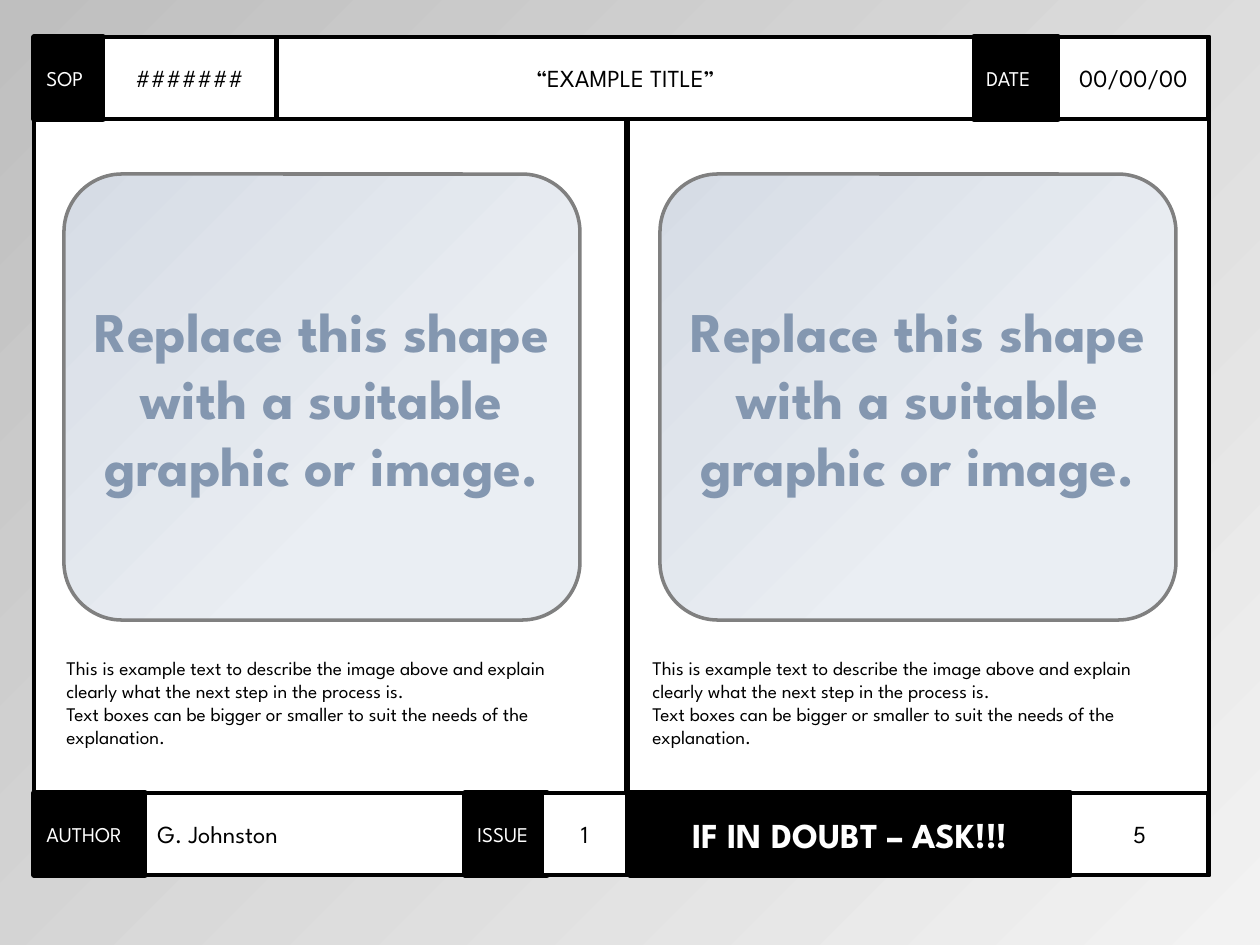
import pptx
import pptx.util
from pptx.dml.color import RGBColor
from pptx.enum.shapes import MSO_CONNECTOR, MSO_SHAPE
from pptx.enum.text import MSO_ANCHOR, PP_ALIGN
from pptx.oxml.ns import qn
from lxml import etree

PX = 914400 / 126
BLACK = RGBColor(0x00, 0x00, 0x00)
WHITE = RGBColor(0xFF, 0xFF, 0xFF)
GREY = RGBColor(0x80, 0x80, 0x80)
SLATE = RGBColor(0x84, 0x97, 0xB0)
PANEL_LIGHT = RGBColor(0xEA, 0xEE, 0xF3)
PANEL_DARK = RGBColor(0xD6, 0xDC, 0xE5)
BACK_LIGHT = RGBColor(0xF2, 0xF2, 0xF2)
BACK_DARK = RGBColor(0xBF, 0xBF, 0xBF)
LEFT, CENTER = PP_ALIGN.LEFT, PP_ALIGN.CENTER


def px(*lengths):
    return [pptx.util.Emu(round(length * PX)) for length in lengths]


def write(shape, text, size=14, color=BLACK, bold=False, align=LEFT, anchor=MSO_ANCHOR.MIDDLE):
    frame = shape.text_frame
    frame.word_wrap = True
    frame.vertical_anchor = anchor
    frame.text = text
    for paragraph in frame.paragraphs:
        paragraph.alignment = align
        font = paragraph.runs[0].font
        font.name = "League Spartan"
        font.size = pptx.util.Pt(size)
        font.bold = bold
        font.color.rgb = color


prs = pptx.Presentation()
prs.slide_width, prs.slide_height = px(1260, 945)
slide = prs.slides.add_slide(prs.slide_layouts[6])
shapes = slide.shapes

# Sheet with its outline
sheet = shapes.add_shape(MSO_SHAPE.RECTANGLE, *px(34, 37, 1175, 838))
sheet.shadow.inherit = False
sheet.fill.solid()
sheet.fill.fore_color.rgb = WHITE
sheet.line.color.rgb = BLACK
sheet.line.width = pptx.util.Pt(2.75)

# Divider between the two steps
divider = shapes.add_connector(MSO_CONNECTOR.STRAIGHT, *px(627, 119, 627, 793))
divider.line.color.rgb = BLACK
divider.line.width = pptx.util.Pt(3)
etree.SubElement(divider._element.spPr, qn("a:effectLst"))

# Header and footer cells: left, width, text, dark, size, alignment
HEADER = [
    (34, 69, "SOP", True, 12, LEFT),
    (103, 173, "#######", False, 14, CENTER),
    (974, 84, "DATE", True, 12, LEFT),
    (1058, 151, "00/00/00", False, 14, CENTER),
    (277, 697, "“EXAMPLE TITLE”", False, 14, CENTER),
]
FOOTER = [
    (34, 111, "AUTHOR", True, 12, LEFT),
    (145, 323, "G. Johnston", False, 14, LEFT),
    (630, 440, "IF IN DOUBT – ASK!!!", True, 20, CENTER),
    (1070, 139, "5", False, 14, CENTER),
    (465, 82, "ISSUE", True, 12, LEFT),
    (542, 85, "1", False, 14, CENTER),
]
for top, cells in ((37, HEADER), (793, FOOTER)):
    for left, width, text, dark, size, align in cells:
        cell = shapes.add_shape(MSO_SHAPE.RECTANGLE, *px(left, top, width, 82))
        cell.shadow.inherit = False
        cell.fill.solid()
        cell.fill.fore_color.rgb = BLACK if dark else WHITE
        cell.line.color.rgb = BLACK
        cell.line.width = pptx.util.Pt(3 if dark else 2.75)
        write(cell, text, size=size, color=WHITE if dark else BLACK,
              bold=size == 20, align=align)

# Steps: graphic panel with its explanation below
gradients = [(slide.background.fill, 0, BACK_LIGHT, BACK_DARK)]
for panel_left, explanation_left in ((64, 54), (660, 640)):
    panel = shapes.add_shape(MSO_SHAPE.ROUNDED_RECTANGLE, *px(panel_left, 174, 516, 446))
    panel.adjustments[0] = 0.13
    panel.shadow.inherit = False
    panel.line.color.rgb = GREY
    panel.line.width = pptx.util.Pt(2)
    gradients.append((panel.fill, 0.32, PANEL_LIGHT, PANEL_DARK))
    write(panel, "Replace this shape with a suitable graphic or image.",
          size=32, color=SLATE, bold=True, align=CENTER)

    explanation = shapes.add_textbox(*px(explanation_left, 650, 556, 106))
    write(explanation,
          "This is example text to describe the image above and explain "
          "clearly what the next step in the process is.\n"
          "Text boxes can be bigger or smaller to suit the needs of the explanation.",
          size=11, anchor=MSO_ANCHOR.TOP)

# Gradients run from light at bottom right to dark at top left
for fill, start, light, dark in gradients:
    fill.gradient()
    fill.gradient_angle = 135
    first, last = fill.gradient_stops
    first.position, last.position = start, 1
    first.color.rgb, last.color.rgb = light, dark

prs.save("out.pptx")
